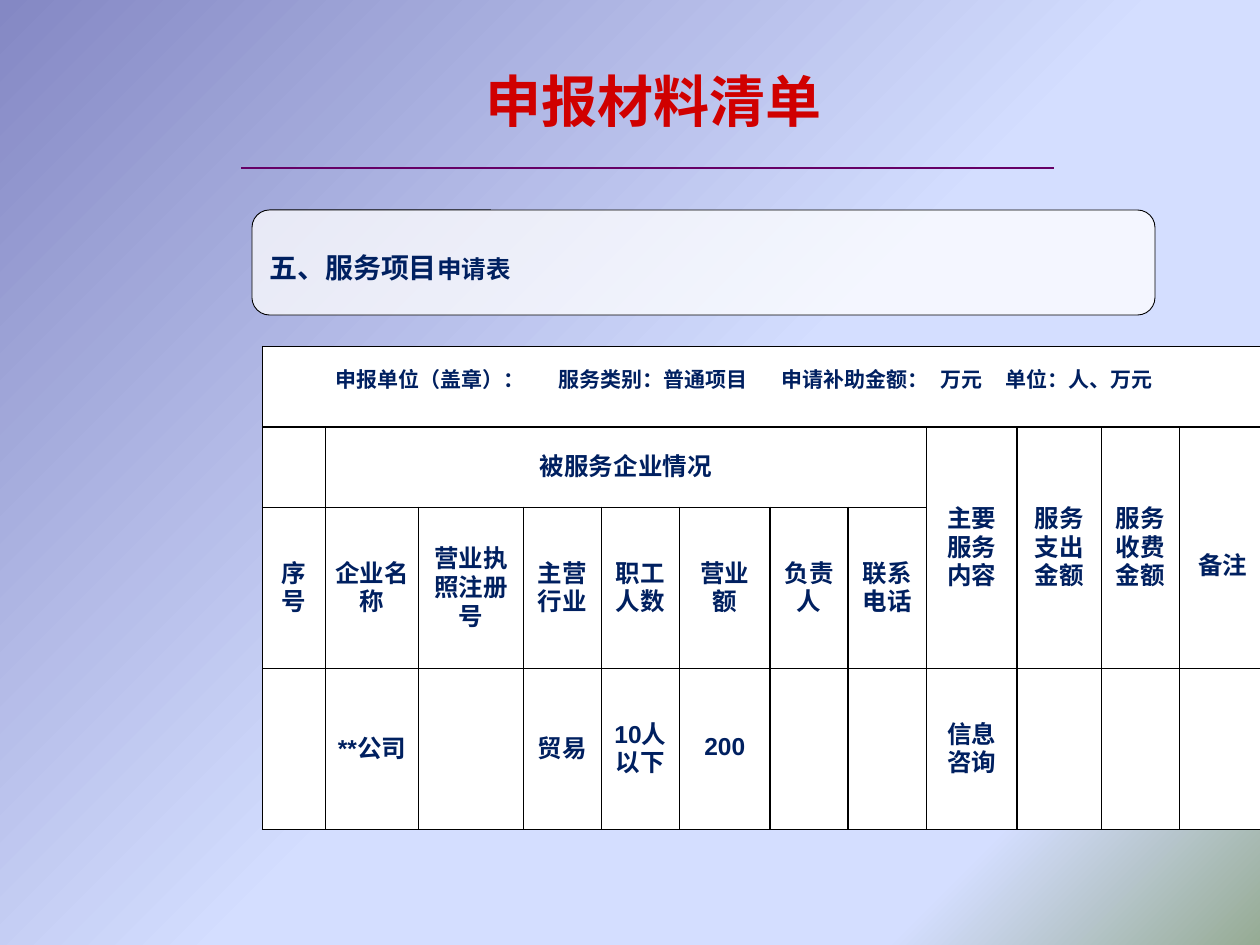
from dataclasses import dataclass

from lxml import etree
from pptx import Presentation
from pptx import util as u
from pptx.dml.color import RGBColor
from pptx.enum import shapes, text
from pptx.oxml import parse_xml
from pptx.oxml.ns import nsdecls, qn

COLORS = {"title": "D00000", "navy": "002060", "rule": "660066", "black": "000000", "white": "FFFFFF"}
BACKGROUND = [(0, "8488C4"), (53, "D4DEFF"), (83, "D4DEFF"), (100, "96AB94")]
UNIT = u.Inches(1) // 12  # the slide is a grid of 120 columns by 90 rows
COLUMN_WIDTHS = [0.5, 0.74, 0.83, 0.62, 0.62, 0.72, 0.62, 0.62, 0.72, 0.67, 0.62, 0.38]
ROW_SHARES = [1, 1, 2, 2]
HEADING_FIELDS = ["申报单位（盖章）：", "服务类别：普通项目", "申请补助金额：", "万元", "单位：人、万元"]
HEADING_TABS = [1.77, 3.54, 4.8, 5.32]


@dataclass
class Box:
    column: float
    row: float
    columns: float
    rows: float

    def lengths(self) -> list[int]:
        return [round(n * UNIT) for n in (self.column, self.row, self.columns, self.rows)]


@dataclass
class Entry:
    row: int
    column: int
    words: str
    row_span: int = 1
    column_span: int = 1
    top: float = 0


ENTRIES = [
    Entry(1, 1, "被服务企业情况", column_span=7),
    *[Entry(1, 8 + i, words, row_span=2)
      for i, words in enumerate(["主要服务内容", "服务支出金额", "服务收费金额"])],
    Entry(1, 11, "备注", row_span=2, top=0.29),
    *[Entry(2, i, words) for i, words in enumerate(
        ["序号", "企业名称", "营业执照注册号", "主营行业", "职工人数", "营业额", "负责人", "联系电话"])],
    Entry(3, 1, "**公司"),
    Entry(3, 3, "贸易"),
    Entry(3, 4, "10人以下"),
    Entry(3, 5, "200"),
    Entry(3, 8, "信息咨询"),
]


def color(name: str) -> RGBColor:
    return RGBColor.from_string(COLORS[name])


def style(font, size: float, name: str = "Arial", shade: str = "navy") -> None:
    font.name, font.size, font.bold = name, u.Pt(size), True
    font.color.rgb = color(shade)


def paint_background(slide) -> None:
    fill = slide.background.fill
    fill.gradient()
    gradient = slide.background._cSld.find(".//" + qn("a:gradFill"))
    for child in list(gradient):
        gradient.remove(child)
    stops = etree.SubElement(gradient, qn("a:gsLst"))
    for position, shade in BACKGROUND:
        stop = etree.SubElement(stops, qn("a:gs"), pos=str(position * 1000))
        etree.SubElement(stop, qn("a:srgbClr"), val=shade)
    etree.SubElement(gradient, qn("a:lin"), ang=str(45 * 60000), scaled="1")


def add_title(slide, box: Box, words: str) -> None:
    title = slide.shapes.title
    title.left, title.top, title.width, title.height = box.lengths()
    frame = title.text_frame
    frame.text = words
    frame.auto_size = text.MSO_AUTO_SIZE.NONE
    frame.vertical_anchor = text.MSO_ANCHOR.MIDDLE
    frame.paragraphs[0].alignment = text.PP_ALIGN.LEFT
    style(frame.paragraphs[0].runs[0].font, 32, "Calibri", "title")


def add_rule(slide, start: float, end: float, row: float) -> None:
    ends = [round(n * UNIT) for n in (start, row, end, row)]
    rule = slide.shapes.add_connector(shapes.MSO_CONNECTOR.STRAIGHT, *ends)
    rule.line.color.rgb = color("rule")
    rule.line.width = u.Pt(0.75)
    etree.SubElement(rule._element.spPr, qn("a:effectLst"))


def add_section(slide, box: Box, parts: list[tuple[str, float]]) -> None:
    section = slide.shapes.add_shape(shapes.MSO_SHAPE.FLOWCHART_ALTERNATE_PROCESS, *box.lengths())
    section.shadow.inherit = False
    section.fill.solid()
    section.fill.fore_color.rgb = color("white")
    shade = section._element.spPr.find(qn("a:solidFill"))[0]
    etree.SubElement(shade, qn("a:alpha"), val="75000")
    section.line.color.rgb = color("black")
    section.line.width = u.Pt(0.5)
    section.text_frame.vertical_anchor = text.MSO_ANCHOR.MIDDLE
    paragraph = section.text_frame.paragraphs[0]
    paragraph.alignment = text.PP_ALIGN.LEFT
    paragraph.line_spacing = u.Pt(25)
    for words, size in parts:
        run = paragraph.add_run()
        run.text = words
        style(run.font, size)


def format_cell(cell) -> None:
    cell.fill.solid()
    cell.fill.fore_color.rgb = color("white")
    cell.vertical_anchor = text.MSO_ANCHOR.MIDDLE
    cell.margin_left = cell.margin_right = u.Inches(0.07)
    cell.margin_top = cell.margin_bottom = 0
    properties = cell._tc.get_or_add_tcPr()
    for index, side in enumerate("LRTB"):
        properties.insert(index, parse_xml(
            f'<a:ln{side} {nsdecls("a")} w="12700"><a:solidFill>'
            f'<a:srgbClr val="{COLORS["black"]}"/></a:solidFill></a:ln{side}>'))


def write_heading(cell) -> None:
    cell.margin_left, cell.margin_bottom = u.Inches(0.58), u.Inches(0.14)
    paragraph = cell.text_frame.paragraphs[0]
    paragraph.text = "\t".join(HEADING_FIELDS)
    tabs = etree.SubElement(paragraph._p.get_or_add_pPr(), qn("a:tabLst"))
    for position in HEADING_TABS:
        etree.SubElement(tabs, qn("a:tab"), pos=str(u.Inches(position)), algn="l")
    for run in paragraph.runs:
        style(run.font, 12)


def write_entry(table, entry: Entry) -> None:
    cell = table.cell(entry.row, entry.column)
    if entry.row_span * entry.column_span > 1:
        cell.merge(table.cell(entry.row + entry.row_span - 1, entry.column + entry.column_span - 1))
    cell.margin_top = u.Inches(entry.top)
    paragraph = cell.text_frame.paragraphs[0]
    paragraph.text = entry.words
    paragraph.alignment = text.PP_ALIGN.CENTER
    paragraph.line_spacing = 0.8
    style(paragraph.runs[0].font, 14)


def add_form(slide, box: Box) -> None:
    frame = slide.shapes.add_table(len(ROW_SHARES), len(COLUMN_WIDTHS), *box.lengths())
    table = frame.table
    table.first_row = table.horz_banding = False
    for column, width in zip(table.columns, COLUMN_WIDTHS):
        column.width = u.Inches(width)
    for row, share in zip(table.rows, ROW_SHARES):
        row.height = round(box.rows * UNIT * share / sum(ROW_SHARES))
    for cell in table.iter_cells():
        format_cell(cell)
    heading = table.cell(0, 0)
    heading.merge(table.cell(0, len(COLUMN_WIDTHS) - 1))
    write_heading(heading)
    for entry in ENTRIES:
        write_entry(table, entry)


def main() -> None:
    presentation = Presentation()
    presentation.slide_width, presentation.slide_height = 120 * UNIT, 90 * UNIT
    slide = presentation.slides.add_slide(presentation.slide_layouts[5])
    paint_background(slide)
    # Title and the rule under it
    add_rule(slide, 23, 100.4, 16)
    add_title(slide, Box(45, 3, 51, 13), "申报材料清单")
    # Application form and its section label
    add_form(slide, Box(25, 33, 92, 46))
    add_section(slide, Box(24, 20, 86, 10), [("五、服务项目", 16), ("申请表", 14)])
    presentation.save("out.pptx")


if __name__ == "__main__":
    main()
